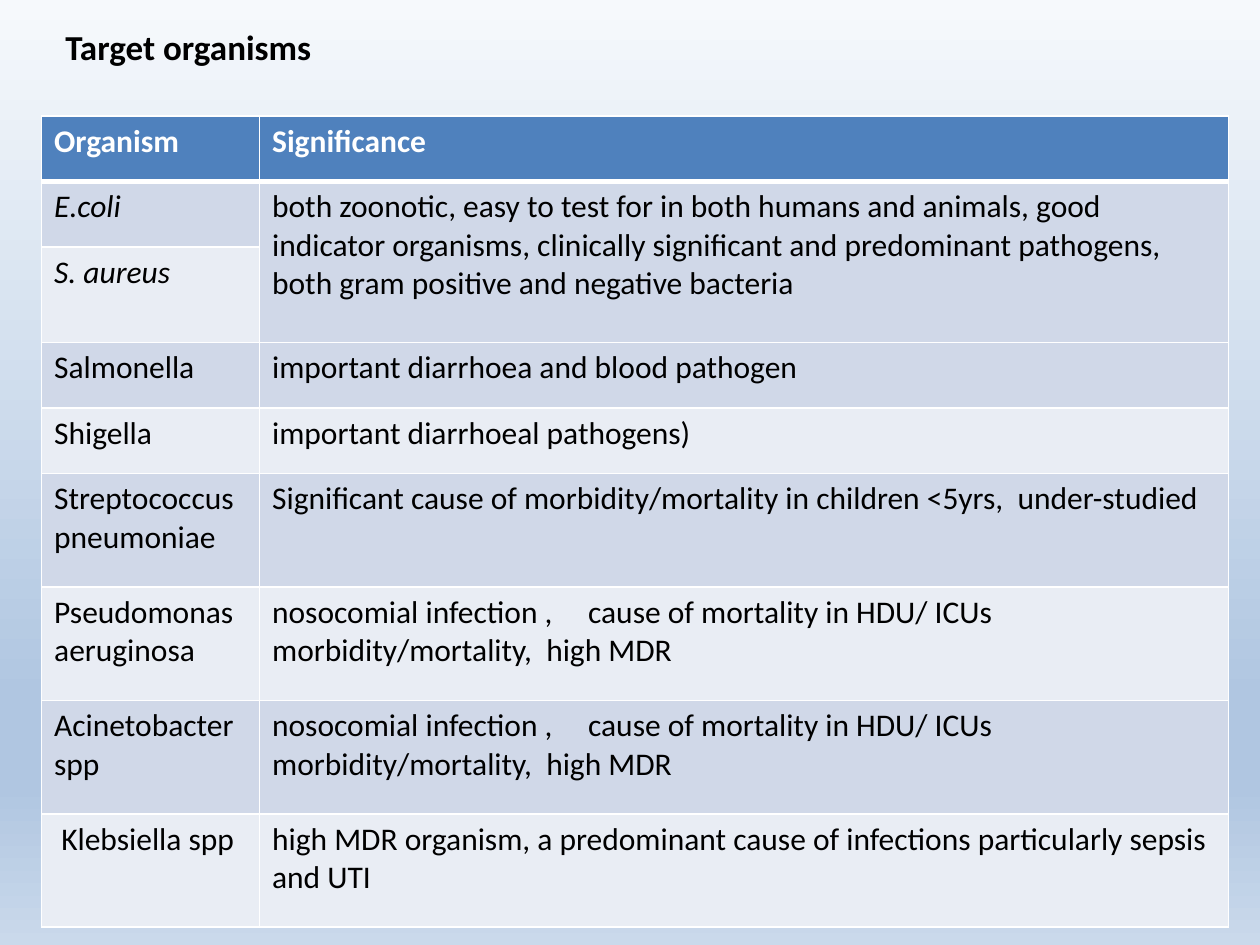
from typing import NamedTuple

from lxml.etree import SubElement as add_element
from pptx import Presentation
from pptx.dml.color import RGBColor
from pptx.oxml.ns import qn
from pptx.util import Inches, Pt

COLORS = {
    "header": "4F81BD", "odd": "D0D8E8", "even": "E9EDF4",
    "white": "FFFFFF", "black": "000000",
}
BACKGROUND = [(0, "F6F9FC"), (74, "B0C6E1"), (83, "B0C6E1"), (100, "CAD9EB")]
HOSPITAL = ("nosocomial infection ,     cause of mortality in HDU/ ICUs "
            "morbidity/mortality,  high MDR")


class Row(NamedTuple):
    organism: str
    significance: str
    height: float = 0.52
    italic: bool = False


ROWS = [
    Row("Organism", "Significance"),
    Row("E.coli", "both zoonotic, easy to test for in both humans and animals, "
        "good indicator organisms, clinically significant and predominant "
        "pathogens, both gram positive and negative bacteria", italic=True),
    Row("S. aureus", "", 0.76, italic=True),
    Row("Salmonella", "important diarrhoea and blood pathogen"),
    Row("Shigella", "important diarrhoeal pathogens)"),
    Row("Streptococcus pneumoniae", "Significant cause of morbidity/mortality "
        "in children <5yrs,  under-studied", 0.9),
    Row("Pseudomonas aeruginosa", HOSPITAL, 0.9),
    Row("Acinetobacter spp", HOSPITAL, 0.9),
    Row(" Klebsiella spp", "high MDR organism, a predominant cause of "
        "infections particularly sepsis and UTI", 0.9),
]
COLUMN_WIDTHS = [1.73, 7.69]


def paint_background(page) -> None:
    fill = page.background.fill
    fill.gradient()
    fill.gradient_angle = 270
    stops = next(page.element.iter(qn("a:gsLst")))
    for stop in list(stops):
        stops.remove(stop)
    for position, color in BACKGROUND:
        stop = add_element(stops, qn("a:gs"), pos=str(position * 1000))
        add_element(stop, qn("a:srgbClr"), val=color)


def write(para, text: str, color: str, **formats) -> None:
    span = para.add_run()
    span.text = text
    span.font.color.rgb = RGBColor.from_string(COLORS[color])
    for name, value in {"name": "Calibri", **formats}.items():
        setattr(span.font, name, value)


def draw_borders(cell, bottom: int, top: int) -> None:
    properties = cell._tc.get_or_add_tcPr()
    widths = {"a:lnL": 1, "a:lnR": 1, "a:lnT": top, "a:lnB": bottom}
    for index, (side, width) in enumerate(widths.items()):
        line = properties.makeelement(qn(side), {"w": str(Pt(width))})
        properties.insert(index, line)
        solid = add_element(line, qn("a:solidFill"))
        add_element(solid, qn("a:srgbClr"), val=COLORS["white"])


def draw_title(page) -> None:
    box = page.shapes.add_textbox(Inches(0.42), Inches(0.15), Inches(9), Inches(0.6))
    box.text_frame.word_wrap = True
    write(box.text_frame.paragraphs[0], "Target organisms", "black",
          size=Pt(20), bold=True)


def draw_table(page) -> None:
    table = page.shapes.add_table(
        len(ROWS), len(COLUMN_WIDTHS), Inches(0.33), Inches(0.92),
        Inches(sum(COLUMN_WIDTHS)), Inches(sum(row.height for row in ROWS))).table
    for column, width in zip(table.columns, COLUMN_WIDTHS):
        column.width = Inches(width)
    for index, row in enumerate(ROWS):
        table.rows[index].height = Inches(row.height)
        header = index == 0
        shade = "header" if header else "odd" if index % 2 else "even"
        for column, text in enumerate((row.organism, row.significance)):
            cell = table.cell(index, column)
            cell.fill.solid()
            cell.fill.fore_color.rgb = RGBColor.from_string(COLORS[shade])
            draw_borders(cell, bottom=3 if header else 1, top=3 if index == 1 else 1)
            if text:
                write(cell.text_frame.paragraphs[0], text,
                      "white" if header else "black", size=Pt(18), bold=header,
                      italic=row.italic and column == 0)
    table.cell(1, 1).merge(table.cell(2, 1))


def main() -> None:
    """Build the target organisms slide."""
    deck = Presentation()
    deck.slide_width, deck.slide_height = Inches(10), Inches(7.5)
    page = deck.slides.add_slide(deck.slide_layouts[6])
    paint_background(page)
    draw_title(page)
    draw_table(page)
    deck.save("out.pptx")


if __name__ == "__main__":
    main()
